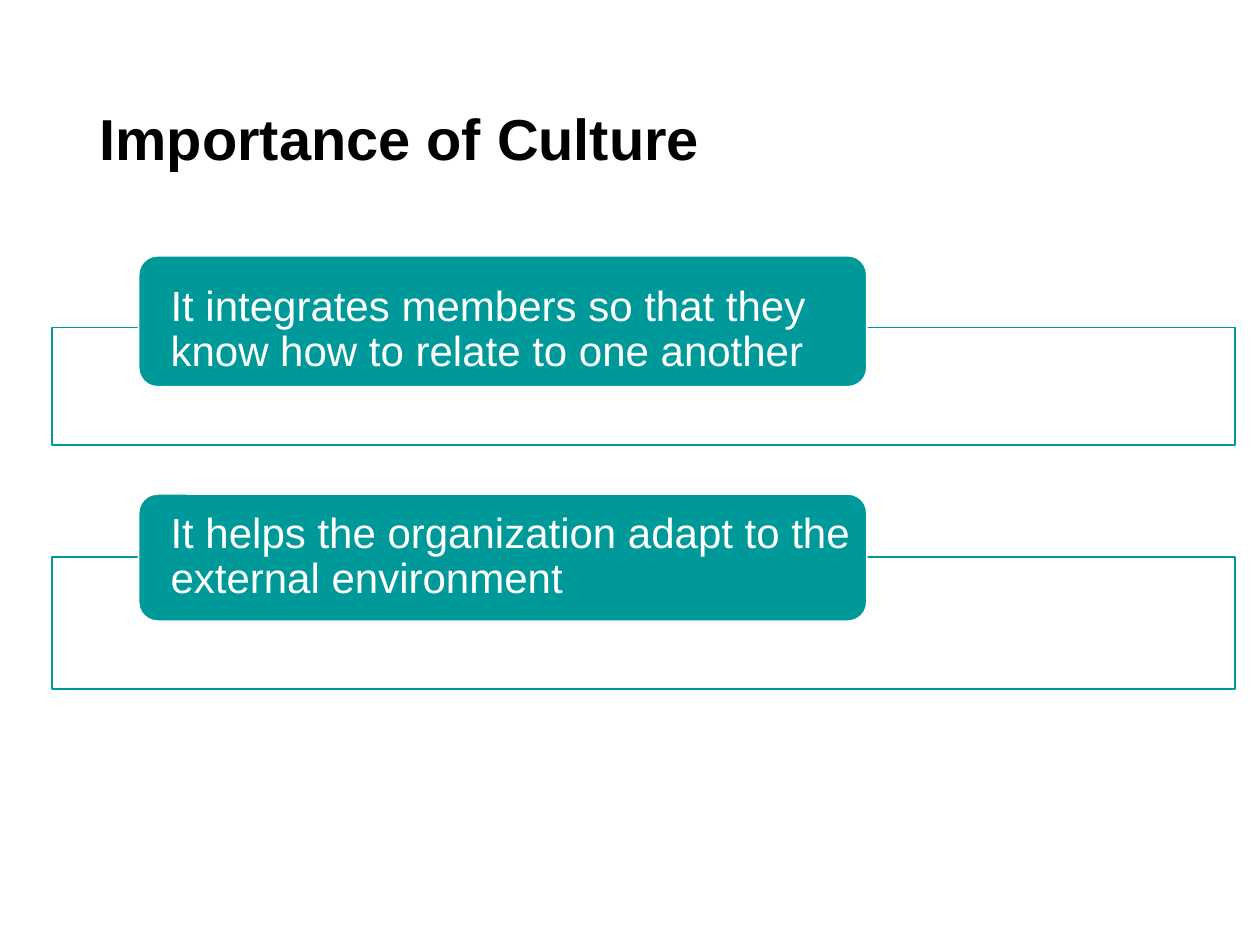
from pptx import Presentation
from pptx.dml.color import RGBColor
from pptx.enum.shapes import MSO_SHAPE
from pptx.enum.text import MSO_ANCHOR, PP_ALIGN
from pptx.util import Inches, Pt

COLORS = {"teal": "009999", "white": "FFFFFF", "black": "000000"}
FONT = "Arial"


def write_text(shape, text, size, color, bold=False, anchor=MSO_ANCHOR.TOP,
               insets=(0.1, 0.05, 0.1, 0.05)):
    """Write one left-aligned paragraph; insets are left, top, right, bottom."""
    frame = shape.text_frame
    frame.word_wrap = True
    frame.vertical_anchor = anchor
    (frame.margin_left, frame.margin_top,
     frame.margin_right, frame.margin_bottom) = map(Inches, insets)
    paragraph = frame.paragraphs[0]
    paragraph.alignment = PP_ALIGN.LEFT
    paragraph.line_spacing = 0.9
    run = paragraph.add_run()
    run.text = text
    run.font.name = FONT
    run.font.size = Pt(size)
    run.font.bold = bold
    run.font.color.rgb = RGBColor.from_string(COLORS[color])


class SlideBuilder:
    corner_radius = 0.15
    line_width = 1

    def __init__(self, slide):
        self.slide = slide

    def title(self, text, left, top, width, height):
        shape = self.slide.shapes.title
        shape.left, shape.top = Inches(left), Inches(top)
        shape.width, shape.height = Inches(width), Inches(height)
        write_text(shape, text, size=33, color="black", bold=True,
                   anchor=MSO_ANCHOR.MIDDLE)

    def box(self, kind, left, top, width, height, line, fill=None):
        shape = self.slide.shapes.add_shape(
            kind, Inches(left), Inches(top), Inches(width), Inches(height))
        shape.shadow.inherit = False
        if fill:
            shape.fill.solid()
            shape.fill.fore_color.rgb = RGBColor.from_string(COLORS[fill])
        else:
            shape.fill.background()
        shape.line.color.rgb = RGBColor.from_string(COLORS[line])
        shape.line.width = Pt(self.line_width)
        return shape

    def frame(self, top, height):
        self.box(MSO_SHAPE.RECTANGLE, 0.41, top, 9.39, height, line="teal")

    def label(self, text, top, height, text_inset):
        shape = self.box(MSO_SHAPE.ROUNDED_RECTANGLE, 1.1, top, 5.78, height,
                         line="white", fill="teal")
        shape.adjustments[0] = self.corner_radius / height
        write_text(shape, text, size=24, color="white",
                   insets=(0.21, text_inset, 0.05, 0))


def main():
    presentation = Presentation()
    presentation.slide_width = Inches(10)
    presentation.slide_height = Inches(7.5)
    title_only = presentation.slide_layouts[5]
    builder = SlideBuilder(presentation.slides.add_slide(title_only))

    # Title
    builder.title("Importance of Culture", 0.69, 0.4, 7.55, 1.45)

    # First reason
    builder.frame(top=2.6, height=0.93)
    builder.label("It integrates members so that they know how to relate to one another",
                  top=2.03, height=1.04, text_inset=0.19)

    # Second reason
    builder.frame(top=4.42, height=1.05)
    builder.label("It helps the organization adapt to the external environment",
                  top=3.92, height=1.01, text_inset=0.1)

    presentation.save("out.pptx")


if __name__ == "__main__":
    main()
